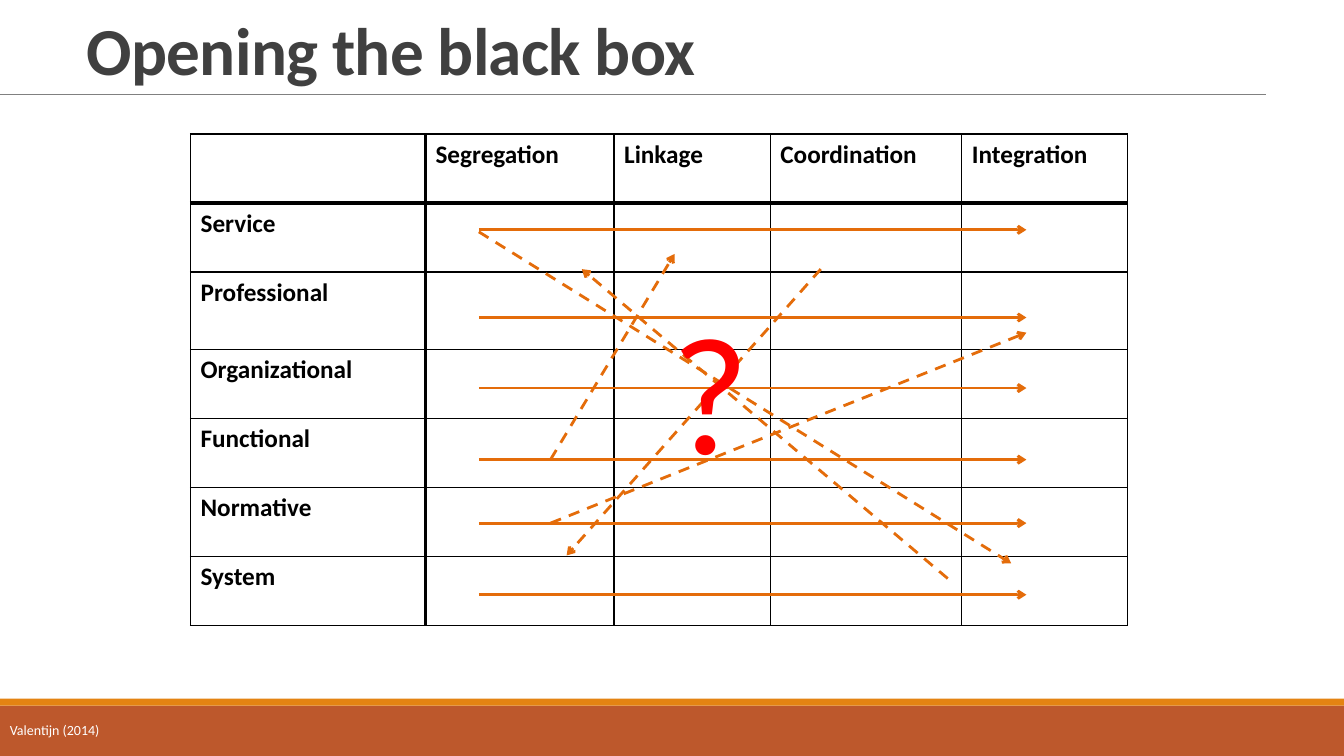
from lxml.etree import SubElement
from pptx import Presentation
from pptx.dml.color import RGBColor
from pptx.enum.dml import MSO_LINE
from pptx.enum.shapes import MSO_CONNECTOR, MSO_SHAPE
from pptx.enum.text import MSO_ANCHOR, PP_ALIGN
from pptx.oxml.ns import qn
from pptx.util import Inches, Pt

BLACK = RGBColor(0x00, 0x00, 0x00)
WHITE = RGBColor(0xFF, 0xFF, 0xFF)
DARK_GRAY = RGBColor(0x40, 0x40, 0x40)
GRAY = RGBColor(0x80, 0x80, 0x80)
RED = RGBColor(0xFF, 0x00, 0x00)
RUST = RGBColor(0xBD, 0x58, 0x2C)
AMBER = RGBColor(0xE4, 0x83, 0x12)
ORANGE = RGBColor(0xE4, 0x6C, 0x0A)

FONT = "Calibri"
WIDTH, HEIGHT = Inches(13.33), Inches(7.5)

STAGES = ["", "Segregation", "Linkage", "Coordination", "Integration"]
LEVELS = ["Service", "Professional", "Organizational",
          "Functional", "Normative", "System"]

# Shares of the slide, in percent
COLUMNS = [17.48, 14.03, 11.63, 14.25, 12.3]
ROWS = [9.13, 9.13, 10.27, 9.13, 9.13, 9.13, 9.13]
ARROW_START, ARROW_END = 35.63, 76.37
LEVEL_ARROWS = [30.4, 42, 51.33, 60.8, 69.2, 78.67]
CROSS_ARROWS = [
    (40.96, 60.8, 50.19, 33.6),
    (61.07, 35.6, 42.16, 73.47),
    (70.52, 76.53, 43.29, 35.6),
    (40.96, 69.2, ARROW_END, 44),
]


def across(share):
    return round(WIDTH * share / 100)


def down(share):
    return round(HEIGHT * share / 100)


def area(x, y, w, h):
    return across(x), down(y), across(w), down(h)


def format_text(tf, size, color, bold=False):
    for p in tf.paragraphs:
        for r in p.runs:
            r.font.name = FONT
            r.font.size = Pt(size)
            r.font.bold = bold
            r.font.color.rgb = color


def add_bar(s, y, h, color):
    sp = s.shapes.add_shape(MSO_SHAPE.RECTANGLE, *area(0, y, 100, h))
    sp.shadow.inherit = False
    sp.fill.solid()
    sp.fill.fore_color.rgb = color
    sp.line.fill.background()


def add_label(s, text, place, size, color, wrap=True):
    tf = s.shapes.add_textbox(*area(*place)).text_frame
    tf.word_wrap = wrap
    tf.text = text
    format_text(tf, size, color)


def add_line(s, x1, y1, x2, y2, color, width):
    line = s.shapes.add_connector(MSO_CONNECTOR.STRAIGHT, across(x1), down(y1),
                                  across(x2), down(y2))
    line.line.color.rgb = color
    line.line.width = Pt(width)
    SubElement(line._element.spPr, qn("a:effectLst"))
    return line


def add_arrow(s, x1, y1, x2, y2, dashed=False):
    arrow = add_line(s, x1, y1, x2, y2, ORANGE, 2)
    if dashed:
        arrow.line.dash_style = MSO_LINE.DASH
    SubElement(arrow.line._get_or_add_ln(), qn("a:tailEnd"), type="arrow")


def set_title(s, text):
    title = s.shapes.title
    title.left, title.top, title.width, title.height = area(5.7, 0, 82.5, 12.53)
    tf = title.text_frame
    tf.text = text
    tf.vertical_anchor = MSO_ANCHOR.BOTTOM
    p = tf.paragraphs[0]
    p.alignment = PP_ALIGN.LEFT
    p.line_spacing = 0.85
    format_text(tf, 48, DARK_GRAY, bold=True)
    p.runs[0].font._element.set("spc", "-50")


def set_borders(cell, widths):
    tcPr = cell._tc.get_or_add_tcPr()
    for side, width in zip("LRTB", widths):
        ln = SubElement(tcPr, qn(f"a:ln{side}"), w=str(Pt(width)))
        fill = SubElement(ln, qn("a:solidFill"))
        SubElement(fill, qn("a:srgbClr"), val=str(BLACK))


def fill_cell(cell, banded):
    if not banded:
        cell.fill.background()
        return
    cell.fill.solid()
    cell.fill.fore_color.rgb = WHITE
    color = cell._tc.tcPr.find(qn("a:solidFill")).find(qn("a:srgbClr"))
    SubElement(color, qn("a:alpha"), val="20000")


def add_matrix(s):
    place = area(14.18, 17.73, sum(COLUMNS), sum(ROWS))
    table = s.shapes.add_table(len(ROWS), len(COLUMNS), *place).table
    table.first_row = table.horz_banding = False
    for column, share in zip(table.columns, COLUMNS):
        column.width = across(share)
    for row, share in zip(table.rows, ROWS):
        row.height = down(share)
    texts = [STAGES] + [[level, "", "", "", ""] for level in LEVELS]
    for i, row in enumerate(texts):
        for j, text in enumerate(row):
            cell = table.cell(i, j)
            cell.text = text
            format_text(cell.text_frame, 18, BLACK, bold=True)
            # Thick rules set off the header row and the first column
            set_borders(cell, (3 if j == 1 else 1, 3 if j == 0 else 1,
                               3 if i == 1 else 1, 3 if i == 0 else 1))
            fill_cell(cell, banded=i % 2 == 1)


def main():
    prs = Presentation()
    prs.slide_width, prs.slide_height = WIDTH, HEIGHT
    s = prs.slides.add_slide(prs.slide_layouts[5])

    # Footer bars, title and source
    add_bar(s, 93.33, 6.67, RUST)
    add_bar(s, 92.4, 0.93, AMBER)
    set_title(s, "Opening the black box")
    add_line(s, 0, 12.53, 94.22, 12.53, GRAY, 1)
    add_label(s, "Valentijn (2014)", (0, 94.8, 100, 3.6), 10, WHITE)

    # Matrix of levels and stages
    add_matrix(s)

    # Straight arrows per level, dashed arrows across levels
    add_arrow(s, ARROW_START, 30.67, 75.24, 74.53, dashed=True)
    for y in LEVEL_ARROWS:
        add_arrow(s, ARROW_START, y, ARROW_END, y)
    for ends in CROSS_ARROWS:
        add_arrow(s, *ends, dashed=True)

    # Open question
    add_label(s, "?", (49.21, 37.2, 7.35, 28.27), 120, RED, wrap=False)

    prs.save("out.pptx")


if __name__ == "__main__":
    main()
